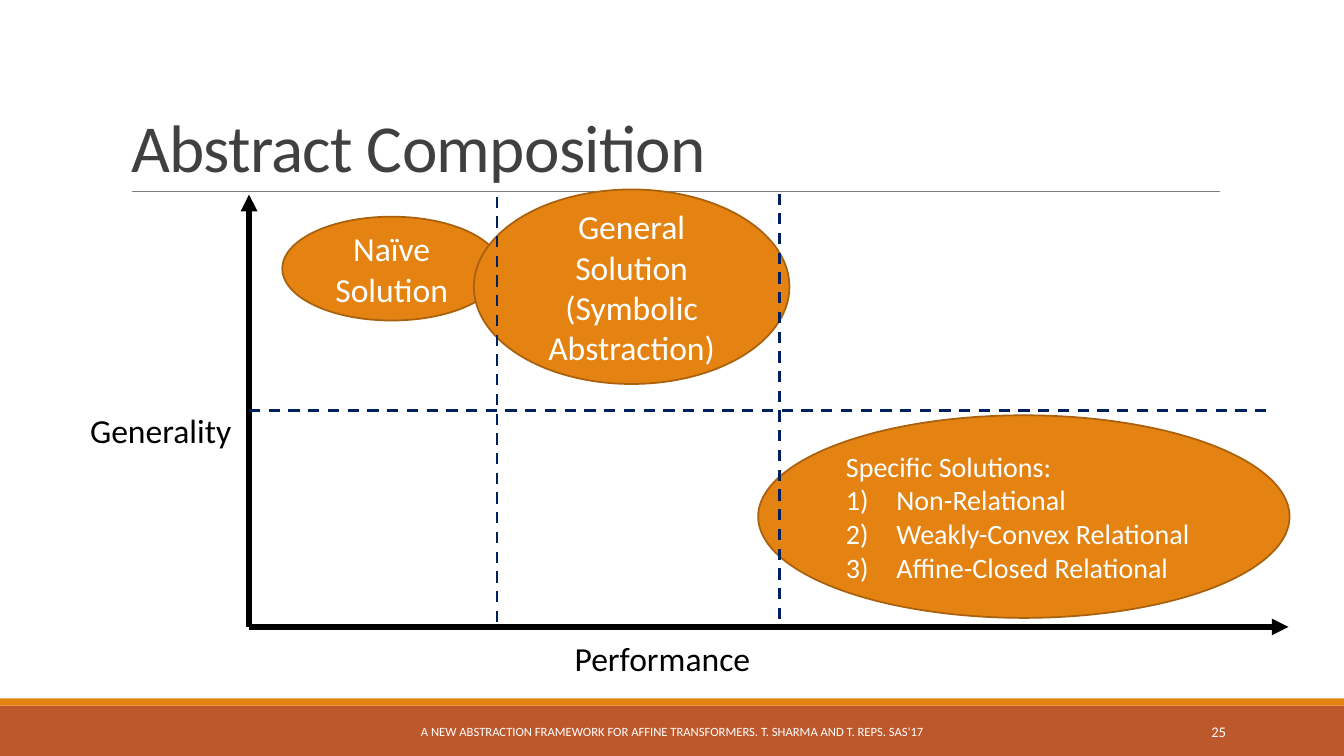
from lxml.etree import SubElement
from pptx import Presentation
from pptx.dml.color import RGBColor
from pptx.enum.dml import MSO_LINE
from pptx.enum.shapes import MSO_CONNECTOR, MSO_SHAPE
from pptx.enum.text import MSO_ANCHOR as ANCHOR, MSO_AUTO_SIZE, PP_ALIGN as ALIGN
from pptx.oxml.ns import qn
from pptx.util import Inches, Pt

FONT = "Calibri"
COLORS = {
    "title": "404040",
    "rule": "808080",
    "axis": "000000",
    "divider": "002060",
    "accent": "E48312",
    "outline": "A9610D",
    "footer": "BD582C",
    "light": "FFFFFF",
}


def rgb(name):
    return RGBColor.from_string(COLORS[name])


def write(shape, lines, size, color, align=ALIGN.CENTER, anchor=ANCHOR.MIDDLE):
    frame = shape.text_frame
    frame.text = "\n".join(lines)
    frame.word_wrap = True
    frame.auto_size = MSO_AUTO_SIZE.NONE
    frame.vertical_anchor = anchor
    for paragraph in frame.paragraphs:
        paragraph.alignment = align
        for run in paragraph.runs:
            run.font.name = FONT
            run.font.size = Pt(size)
            run.font.color.rgb = rgb(color)


def add_label(slide, box, text, size, color, align=ALIGN.CENTER):
    label = slide.shapes.add_textbox(*map(Inches, box))
    write(label, [text], size, color, align)


def add_line(slide, start, end, color, width, dashed=False, arrow=False):
    line = slide.shapes.add_connector(
        MSO_CONNECTOR.STRAIGHT, *map(Inches, (*start, *end)))
    line.line.color.rgb = rgb(color)
    line.line.width = Pt(width)
    if dashed:
        line.line.dash_style = MSO_LINE.DASH
    if arrow:
        SubElement(line.line._get_or_add_ln(), qn("a:tailEnd"), type="triangle")
    SubElement(line._element.spPr, qn("a:effectLst"))


def add_filled(slide, kind, box, fill, outline=None):
    shape = slide.shapes.add_shape(kind, *map(Inches, box))
    shape.shadow.inherit = False
    shape.fill.solid()
    shape.fill.fore_color.rgb = rgb(fill)
    if outline:
        shape.line.color.rgb = rgb(outline)
        shape.line.width = Pt(1.25)
    else:
        shape.line.fill.background()
    return shape


def add_solution(slide, box, lines, size, align=ALIGN.CENTER):
    ellipse = add_filled(slide, MSO_SHAPE.OVAL, box, "accent", "outline")
    write(ellipse, lines, size, "light", align)
    return ellipse


def number_paragraphs(paragraphs):
    for paragraph in paragraphs:
        properties = paragraph._p.get_or_add_pPr()
        properties.set("marL", str(Inches(0.5)))
        properties.set("indent", str(-Inches(0.5)))
        SubElement(properties, qn("a:buFont"), typeface="+mj-lt")
        SubElement(properties, qn("a:buAutoNum"), type="arabicParenR")


def add_title(slide, left, top, width, height):
    title = slide.shapes.title
    title.left, title.top = Inches(left), Inches(top)
    title.width, title.height = Inches(width), Inches(height)
    write(title, ["Abstract Composition"], 48, "title", ALIGN.LEFT, ANCHOR.BOTTOM)
    paragraph = title.text_frame.paragraphs[0]
    paragraph.line_spacing = 0.85
    paragraph.runs[0].font._element.set("spc", "-50")
    bottom = top + height
    add_line(slide, (left + 0.11, bottom), (left + width + 0.01, bottom), "rule", 0.5)


def add_tradeoff_chart(slide, left, top, width, height):
    """Place solutions by performance (x) and generality (y)."""
    right, bottom = left + width, top + height
    origin = (left, bottom)
    for end in ((left, top), (right, bottom)):
        add_line(slide, origin, end, "axis", 4, arrow=True)
    add_label(slide, (left + 2.65, bottom - 0.03, 2.9, 0.67), "Performance", 24, "axis")
    add_label(slide, (left - 1.74, top + 1.89, 1.73, 0.9), "Generality", 24, "axis")

    add_solution(slide, (left + 0.33, top + 0.22, 2.17, 1.03), ["Naïve Solution"], 24)
    specific = add_solution(
        slide, (left + 5.05, top + 2.19, 5.27, 2.01),
        ["Specific Solutions:", "Non-Relational", "Weakly-Convex Relational",
         "Affine-Closed Relational"], 20, ALIGN.LEFT)
    number_paragraphs(specific.text_frame.paragraphs[1:])
    add_solution(slide, (left + 2.23, top - 0.05, 3.13, 1.93),
                 ["General Solution (Symbolic Abstraction)"], 24)

    middle = top + 2.14
    dividers = [
        ((left, middle), (right - 0.15, middle)),
        ((left + 5.26, top - 0.01), (left + 5.26, bottom - 0.03)),
        ((left + 2.46, top + 0.02), (left + 2.46, bottom)),
    ]
    for start, end in dividers:
        add_line(slide, start, end, "divider", 2, dashed=True)


def add_footer(slide, left, top, width, height):
    stripe = 0.07
    add_filled(slide, MSO_SHAPE.RECTANGLE,
               (left, top + stripe, width, height - stripe), "footer")
    add_filled(slide, MSO_SHAPE.RECTANGLE, (left, top, width, stripe), "accent")
    text_top = top + 0.13
    add_label(slide, (left + 4.03, text_top, 5.27, 0.4),
              "A NEW ABSTRACTION FRAMEWORK FOR AFFINE TRANSFORMERS. "
              "T. SHARMA AND T. REPS. SAS'17", 9, "light")
    add_label(slide, (left + 10.83, text_top, 1.43, 0.4), "25", 10.5, "light",
              ALIGN.RIGHT)


def main():
    presentation = Presentation()
    presentation.slide_width = Inches(13.33)
    presentation.slide_height = Inches(7.5)
    slide = presentation.slides.add_slide(presentation.slide_layouts[5])
    add_footer(slide, 0, 6.93, 13.33, 0.57)
    add_title(slide, 1.2, 0.31, 10.89, 1.59)
    add_tradeoff_chart(slide, 2.47, 1.93, 10.31, 4.29)
    presentation.save("out.pptx")


if __name__ == "__main__":
    main()
